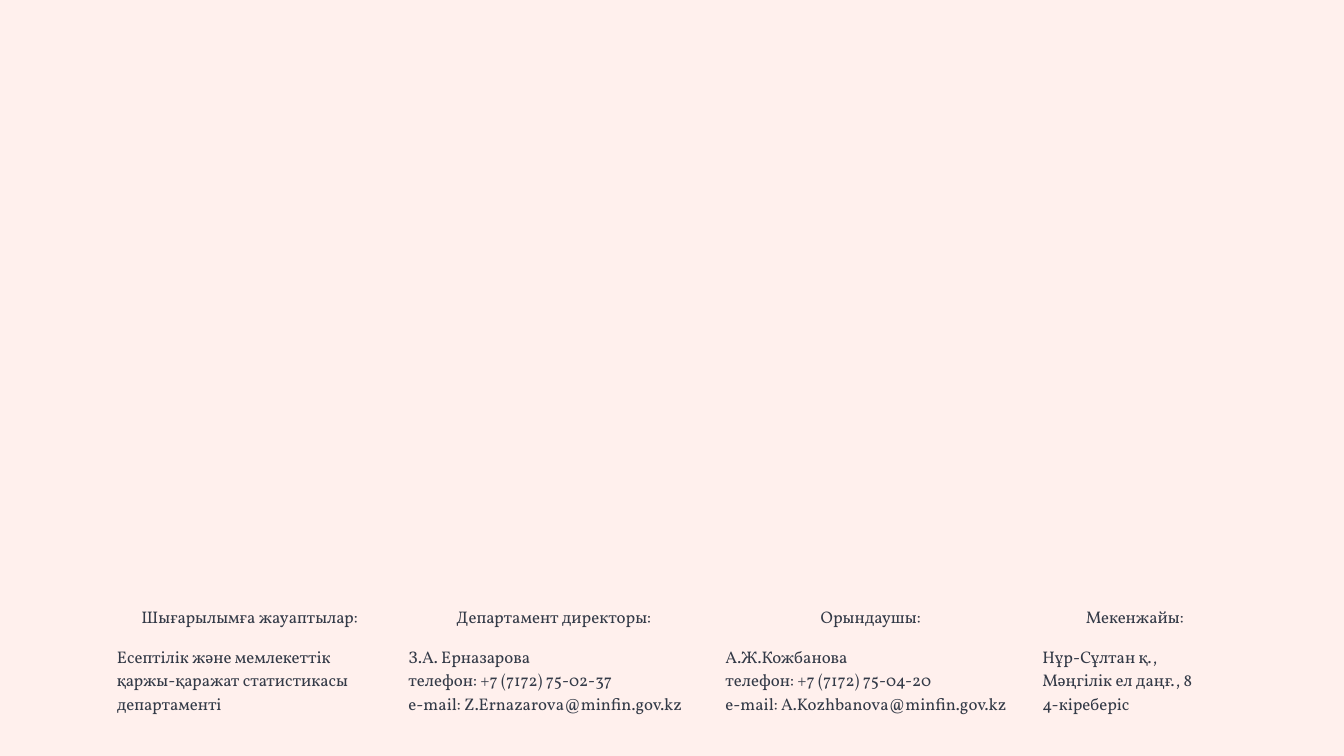
from pptx import Presentation
from pptx import util as u
from pptx.dml.color import RGBColor
from pptx.enum import text

FONT = "Vollkorn"
INK = "333A47"
BACKGROUND = "FFF0ED"
NO_GRID_STYLE = "{2D5ABB26-0587-4C30-8999-92F81FD0307C}"

# heading, column width in cm, lines below the heading
CONTACTS = [
    ("Шығарылымға жауаптылар:", 5.51,
     ["Есептілік және мемлекеттік", "қаржы-қаражат статистикасы", "департаменті"]),
    ("Департамент директоры:", 5.99,
     ["З.А. Ерназарова", "телефон: +7 (7172) 75-02-37",
      "e-mail: Z.Ernazarova@minfin.gov.kz"]),
    ("Орындаушы:", 5.99,
     ["А.Ж.Кожбанова", "телефон: +7 (7172) 75-04-20",
      "e-mail: A.Kozhbanova@minfin.gov.kz"]),
    ("Мекенжайы:", 3.99,
     ["Нұр-Сұлтан қ.,", "Мәңгілік ел даңғ., 8", "4-кіреберіс"]),
]
ROW_HEIGHTS = (0.69, 1.7)


def set_color(color_format, hex_code):
    color_format.rgb = RGBColor.from_string(hex_code)


def write(frame, lines, size=9, color=INK, align=text.PP_ALIGN.LEFT):
    for i, line in enumerate(lines):
        paragraph = frame.paragraphs[0] if i == 0 else frame.add_paragraph()
        paragraph.alignment = align
        run = paragraph.add_run()
        run.text = line
        run.font.name = FONT
        run.font.size = u.Pt(size)
        set_color(run.font.color, color)


def fill_cell(cell, lines, **style):
    cell.fill.background()
    cell.vertical_anchor = text.MSO_ANCHOR.MIDDLE
    cell.margin_left = cell.margin_right = u.Cm(0.25)
    cell.margin_top = cell.margin_bottom = u.Cm(0.13)
    write(cell.text_frame, lines, **style)


def add_contacts(slide, left, top, width, height):
    frame = slide.shapes.add_table(len(ROW_HEIGHTS), len(CONTACTS),
                                   left, top, width, height)
    contacts = frame.table
    contacts.first_row = contacts.horz_banding = False
    # Table style without borders
    contacts._tbl.tblPr.find("{*}tableStyleId").text = NO_GRID_STYLE

    for row, row_height in zip(contacts.rows, ROW_HEIGHTS):
        row.height = u.Cm(row_height)
    for i, (heading, column_width, details) in enumerate(CONTACTS):
        contacts.columns[i].width = u.Cm(column_width)
        fill_cell(contacts.cell(0, i), [heading], align=text.PP_ALIGN.CENTER)
        fill_cell(contacts.cell(1, i), details)


def main():
    deck = Presentation()
    deck.slide_width, deck.slide_height = u.Cm(25.4), u.Cm(14.29)
    slide = deck.slides.add_slide(deck.slide_layouts[6])

    # Background
    slide.background.fill.solid()
    set_color(slide.background.fill.fore_color, BACKGROUND)

    # Contact details along the bottom
    add_contacts(slide, u.Cm(1.96), u.Cm(11.35),
                 u.Cm(sum(width for _, width, _ in CONTACTS)),
                 u.Cm(sum(ROW_HEIGHTS)))
    deck.save("out.pptx")


if __name__ == "__main__":
    main()
